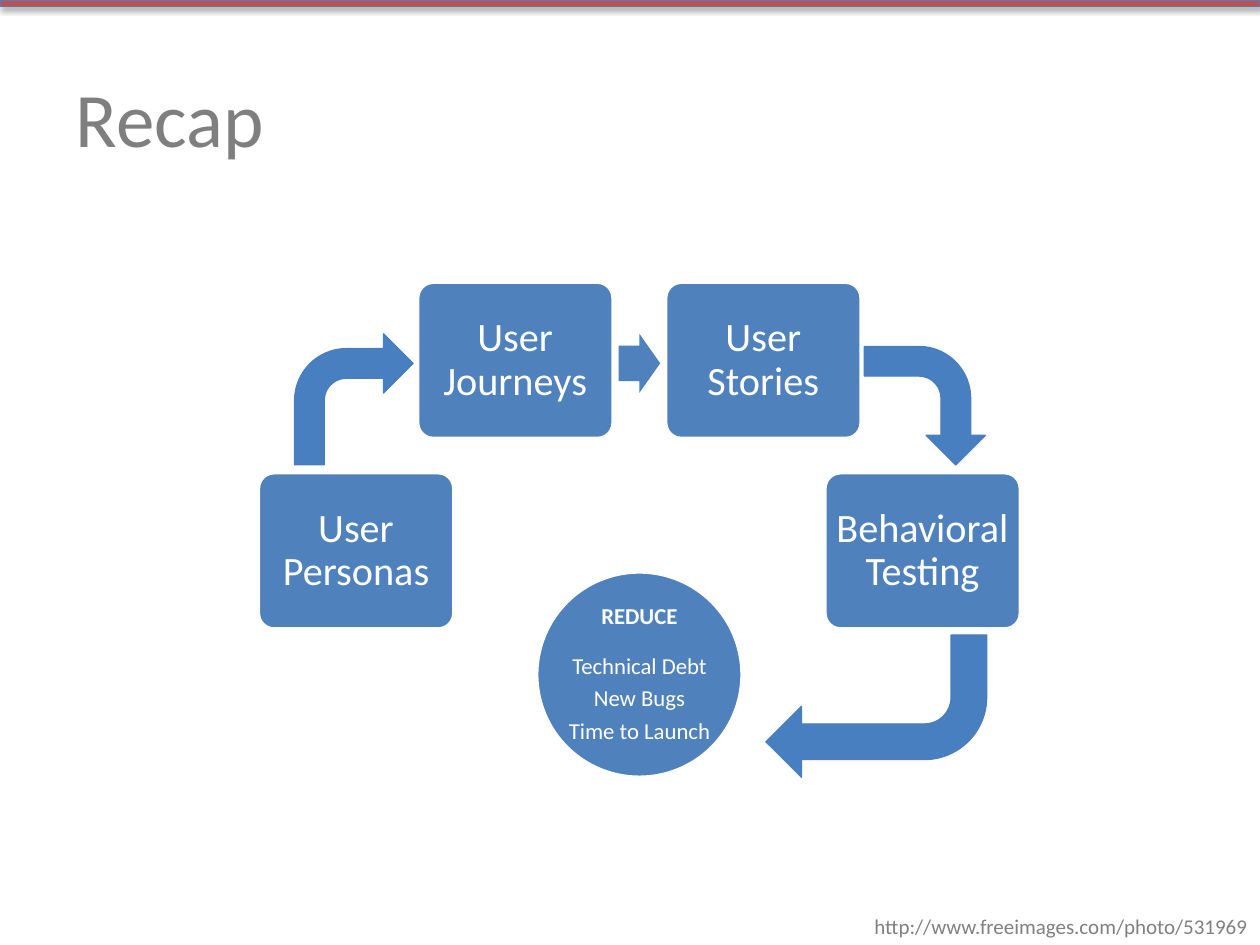
from dataclasses import dataclass
from lxml import etree
from pptx import Presentation
from pptx import util as u
from pptx.dml.color import RGBColor
from pptx.enum import shapes, text
from pptx.oxml import ns

KIND = shapes.MSO_SHAPE
ALIGN = text.PP_ALIGN


@dataclass
class Theme:
    font: str = "Calibri"
    node: str = "4F81BD"
    bend: str = "477FC1"
    edge: str = "4B7EBC"
    bar: str = "C0504D"
    light: str = "FFFFFF"
    title: str = "7F7F7F"
    credit: str = "808080"
    head: int = 44
    large: int = 23
    mid: int = 13
    small: int = 12


def write(frame, lines, size, color, font, align=ALIGN.CENTER, bold=(),
          space=None, after=0, inset=None, anchor=None, wrap=True):
    """Fill a frame; bold holds line numbers, after holds points for each line."""
    frame.word_wrap = wrap
    if anchor is not None:
        frame.vertical_anchor = anchor
    if inset is not None:
        frame.margin_left = frame.margin_right = u.Cm(inset)
        frame.margin_top = frame.margin_bottom = u.Cm(inset)
    for i, line in enumerate(lines):
        para = frame.paragraphs[0] if i == 0 else frame.add_paragraph()
        para.alignment = align
        para.line_spacing = space
        para.space_before = u.Pt(0)
        para.space_after = u.Pt(after[i] if isinstance(after, list) else after)
        run = para.add_run()
        run.text = line
        run.font.name = font
        run.font.size = u.Pt(size)
        run.font.bold = i in bold
        run.font.color.rgb = RGBColor.from_string(color)


def cast(shape):
    """Give a shape a soft shadow straight below it."""
    list_ = shape._element.spPr.find(ns.qn("a:effectLst"))
    shade = etree.SubElement(list_, ns.qn("a:outerShdw"), blurRad="40000",
                             dist="23000", dir="5400000", rotWithShape="0")
    tone = etree.SubElement(shade, ns.qn("a:srgbClr"), val="000000")
    etree.SubElement(tone, ns.qn("a:alpha"), val="35000")


class Deck:
    def __init__(self, theme):
        self.theme = theme
        self.prs = Presentation()
        self.prs.slide_width, self.prs.slide_height = u.Cm(25.4), u.Cm(19.05)
        self.slide = self.prs.slides.add_slide(self.prs.slide_layouts[5])

    def shape(self, kind, box, fill, line=None, width=0.75, turn=0, adj=()):
        item = self.slide.shapes.add_shape(kind, *map(u.Cm, box))
        item.shadow.inherit = False
        item.rotation = turn
        for i, value in enumerate(adj):
            item.adjustments[i] = value
        item.fill.solid()
        item.fill.fore_color.rgb = RGBColor.from_string(fill)
        if line:
            item.line.color.rgb = RGBColor.from_string(line)
            item.line.width = u.Pt(width)
        else:
            item.line.fill.background()
        return item

    def bar(self):
        cast(self.shape(KIND.RECTANGLE, (0, 0, 25.4, 0.13),
                        self.theme.bar, self.theme.edge))

    def title(self, words, box):
        item = self.slide.shapes.title
        item.left, item.top, item.width, item.height = map(u.Cm, box)
        write(item.text_frame, [words], self.theme.head, self.theme.title,
              self.theme.font, align=ALIGN.LEFT, anchor=text.MSO_ANCHOR.MIDDLE)

    def credit(self, words, box):
        item = self.slide.shapes.add_textbox(*map(u.Cm, box))
        write(item.text_frame, [words], self.theme.small, self.theme.credit,
              self.theme.font, align=ALIGN.RIGHT, wrap=False)

    def node(self, kind, box, lines, size, inset, adj=(), **form):
        item = self.shape(kind, box, self.theme.node, self.theme.light, 2, adj=adj)
        write(item.text_frame, lines, size, self.theme.light, self.theme.font,
              space=0.9, inset=inset, anchor=text.MSO_ANCHOR.MIDDLE, **form)

    def step(self, words, mid, top):
        wide, high = 3.94, 3.15
        self.node(KIND.ROUNDED_RECTANGLE, (mid - wide / 2, top, wide, high),
                  [words], self.theme.large, 0.12, adj=[0.1], after=8)

    def bend(self, box, turn=0):
        self.shape(KIND.BENT_ARROW, box, self.theme.bend, self.theme.edge, turn=turn)

    def arrow(self, box):
        self.shape(KIND.RIGHT_ARROW, box, self.theme.node, adj=[0.6, 0.5])


def main():
    deck = Deck(Theme())
    deck.bar()
    deck.title("Recap", (1.27, 0.76, 22.86, 3.18))
    deck.credit("http://www.freeimages.com/photo/531969", (17.02, 18.29, 8.38, 0.76))

    mid, size = 12.89, 4.14
    deck.node(KIND.OVAL, (mid - size / 2, 11.53, size, size),
              ["REDUCE", "Technical Debt", "New Bugs", "Time to Launch"],
              deck.theme.mid, 0.03, bold=[0], after=[14, 4.5, 4.5, 4.5])

    near, far = 2.5, 5.71
    high, low = 5.69, 9.53
    for words, shift, top in [("User Personas", -far, low),
                              ("User Journeys", -near, high),
                              ("User Stories", near, high),
                              ("Behavioral Testing", far, low)]:
        deck.step(words, mid + shift, top)

    deck.arrow((12.47, 6.73, 0.84, 1.19))
    deck.bend((5.94, 6.73, 2.39, 2.64))
    deck.bend((15.44, 12.8, 4.45, 2.87), turn=180)
    deck.bend((17.45, 6.96, 2.39, 2.44), turn=90)
    deck.prs.save("out.pptx")


if __name__ == "__main__":
    main()
